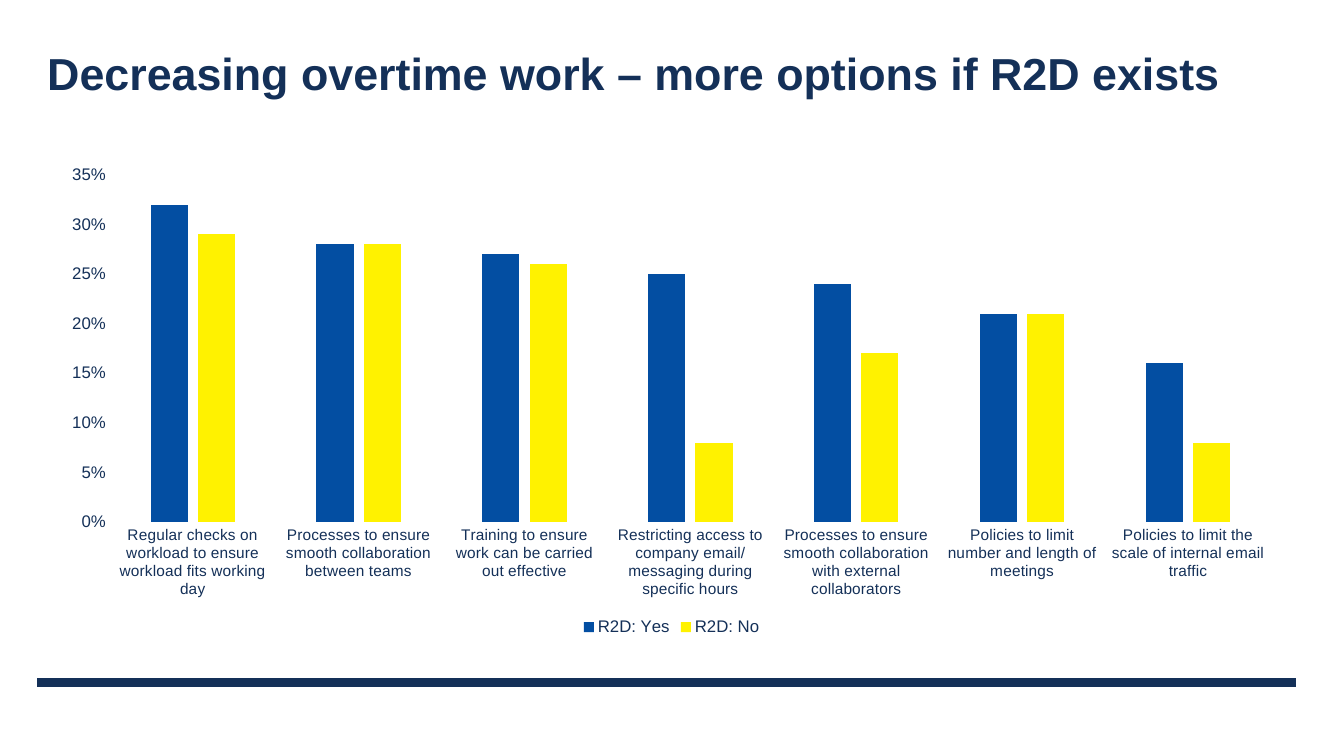
from dataclasses import dataclass

from lxml.etree import SubElement
from pptx import Presentation
from pptx.chart.data import CategoryChartData
from pptx.dml.color import RGBColor
from pptx.enum.chart import XL_CHART_TYPE as ChartType
from pptx.enum.chart import XL_LEGEND_POSITION as LegendPosition
from pptx.enum.chart import XL_TICK_MARK as TickMark
from pptx.enum.shapes import MSO_CONNECTOR as Connector
from pptx.enum.text import MSO_ANCHOR as Anchor
from pptx.oxml.ns import qn
from pptx.util import Cm, Pt


@dataclass(frozen=True)
class Theme:
    face: str = "Arial"
    navy: RGBColor = RGBColor(0x14, 0x30, 0x58)
    blue: RGBColor = RGBColor(0x03, 0x4E, 0xA2)
    yellow: RGBColor = RGBColor(0xFF, 0xF2, 0x00)
    white: RGBColor = RGBColor(0xFF, 0xFF, 0xFF)
    title: Pt = Pt(32)
    label: Pt = Pt(12)
    category: Pt = Pt(11)
    base: Pt = Pt(10)


theme = Theme()


def style_font(font, size, color=theme.navy, bold=False):
    font.name, font.size, font.bold = theme.face, size, bold
    font.color.rgb = color


def add_text(slide, text, left, top, width, height, anchor=Anchor.MIDDLE, **style):
    frame = slide.shapes.add_textbox(left, top, width, height).text_frame
    frame.word_wrap = True
    frame.vertical_anchor = anchor
    run = frame.paragraphs[0].add_run()
    run.text = text
    style_font(run.font, **style)


deck = Presentation()
deck.slide_width, deck.slide_height = Cm(33.87), Cm(19.05)
slide = deck.slides.add_slide(deck.slide_layouts[6])
margin, content_width = Cm(0.94), Cm(31.72)

# Footer rule and title
rule_y = Cm(17.2)
footer_rule = slide.shapes.add_connector(
    Connector.STRAIGHT, margin, rule_y, margin + content_width, rule_y)
footer_rule.line.color.rgb = theme.navy
footer_rule.line.width = Pt(6)
SubElement(footer_rule.element.spPr, qn("a:effectLst"))

add_text(slide, "Decreasing overtime work – more options if R2D exists",
         margin, Cm(0.76), content_width, Cm(2.16), size=theme.title, bold=True)

# Chart of measures
measures = [
    ("Regular checks on workload to ensure workload fits working day", 0.32, 0.29),
    ("Processes to ensure smooth collaboration between teams", 0.28, 0.28),
    ("Training to ensure work can be carried out effective", 0.27, 0.26),
    ("Restricting access to company email/messaging during specific hours", 0.25, 0.08),
    ("Processes to ensure smooth collaboration with external collaborators", 0.24, 0.17),
    ("Policies to limit number and length of meetings", 0.21, 0.21),
    ("Policies to limit the scale of internal email traffic", 0.16, 0.08),
]
names, with_r2d, without_r2d = zip(*measures)
shares = CategoryChartData(number_format="0%")
shares.categories = names
shares.add_series("R2D: Yes", with_r2d)
shares.add_series("R2D: No", without_r2d)

chart = slide.shapes.add_chart(
    ChartType.COLUMN_CLUSTERED, Cm(1.19), Cm(3.94), Cm(31.47), Cm(12.19), shares).chart
chart.has_title = False
style_font(chart.font, theme.base, theme.white)

plot = chart.plots[0]
plot.gap_width, plot.overlap = 219, -27
plot.vary_by_categories = False
for series, color in zip(plot.series, (theme.blue, theme.yellow)):
    series.invert_if_negative = False
    series.format.fill.solid()
    series.format.fill.fore_color.rgb = color

measure_axis, share_axis = chart.category_axis, chart.value_axis
for axis, size in ((measure_axis, theme.category), (share_axis, theme.label)):
    axis.major_tick_mark = axis.minor_tick_mark = TickMark.NONE
    style_font(axis.tick_labels.font, size)

share_axis.minimum_scale, share_axis.maximum_scale = 0, 0.35
share_axis.major_unit = 0.05
share_axis.tick_labels.number_format = "0%"
share_axis.tick_labels.number_format_is_linked = False
share_axis.format.line.fill.background()
share_axis.has_major_gridlines = True
for line in (measure_axis.format.line, share_axis.major_gridlines.format.line):
    line.color.rgb = theme.white
    line.width = Pt(0.75)

chart.has_legend = True
chart.legend.position = LegendPosition.BOTTOM
chart.legend.include_in_layout = False
style_font(chart.legend.font, theme.label)

deck.save("out.pptx")
